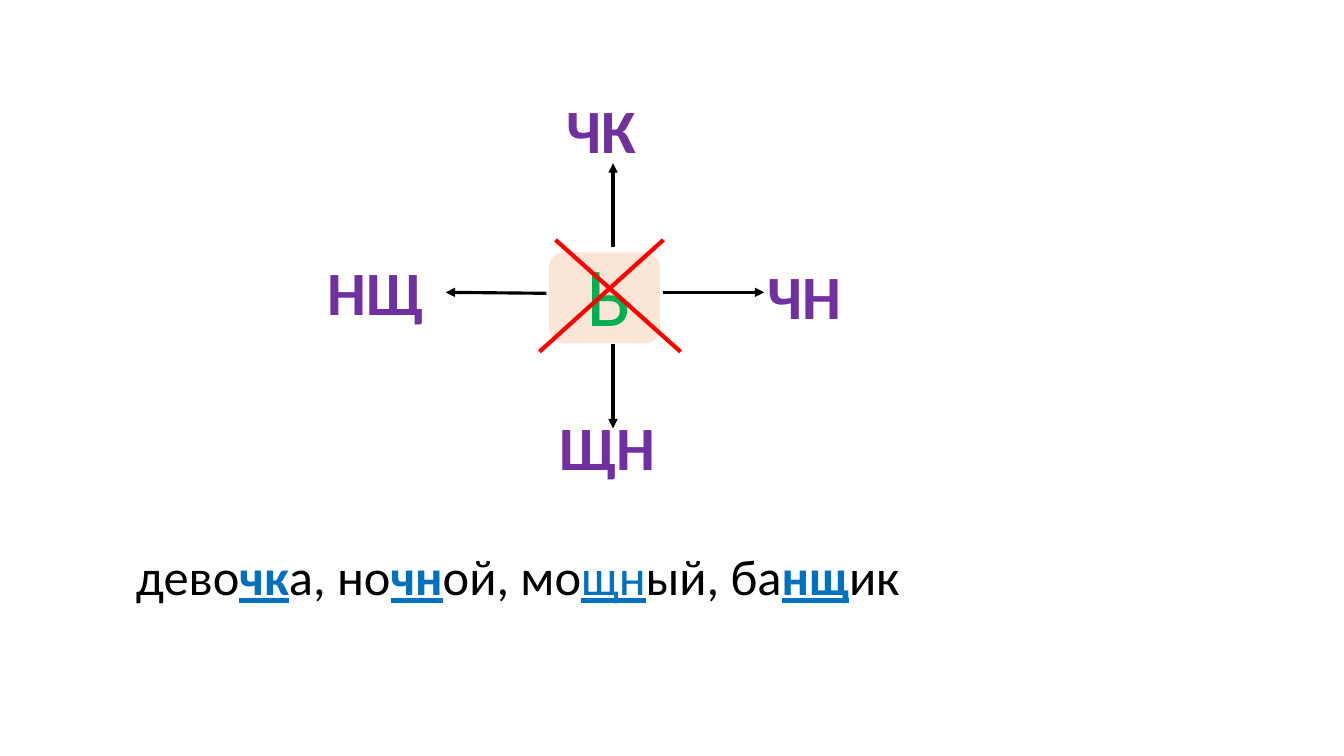
"""Build the slide on spelling letter pairs without a soft sign."""
from lxml.etree import SubElement
from pptx import Presentation
from pptx.dml.color import RGBColor
from pptx.enum.shapes import MSO_CONNECTOR, MSO_SHAPE
from pptx.oxml.ns import qn
from pptx.util import Inches, Pt

COLORS = {
    "card": "FBE5D6", "sign": "00B050", "cross": "FF0000", "arrow": "000000",
    "pair": "7030A0", "text": "000000", "accent": "0070C0",
}
CARD = (5.45, 2.51, 1.09, 0.89)
SIGN = ("Ь", (5.72, 2.36, 0.72, 1.11))
CROSS = [((6.58, 2.38), (5.35, 3.49)), ((5.51, 2.38), (6.75, 3.49))]
ARROWS = [
    ((6.08, 2.45), (6.08, 1.62)),
    ((6.08, 3.41), (6.08, 4.25)),
    ((5.42, 2.91), (4.42, 2.9)),
    ((6.58, 2.9), (7.58, 2.9)),
]
PAIRS = [
    ("ЧК", (5.52, 0.86, 1.11, 0.84)),
    ("ЧН", (7.51, 2.51, 1.11, 0.84)),
    ("ЩН", (5.45, 4.01, 1.42, 0.84)),
    ("НЩ", (3.15, 2.47, 1.42, 0.84)),
]
PLAIN = {}
MARKED = {"color": "accent", "underline": True}
STRONG = {**MARKED, "bold": True}
EXAMPLES = [
    ("дево", PLAIN), ("чк", STRONG), ("а, но", PLAIN), ("чн", STRONG),
    ("ой, мо", PLAIN), ("щн", MARKED), ("ый, ба", PLAIN), ("нщ", STRONG),
    ("ик", PLAIN),
]
EXAMPLES_BOX = (1.25, 5.36, 9.26, 0.71)


def rgb(name):
    """Return the named colour."""
    return RGBColor.from_string(COLORS[name])


def add_run(paragraph, text, size=36, color="text", bold=False, underline=False):
    """Append one formatted run."""
    run = paragraph.add_run()
    run.text = text
    font = run.font
    font.name, font.size = "Calibri", Pt(size)
    font.bold, font.underline = bold, underline
    font.color.rgb = rgb(color)


def add_text(slide, box, runs, **style):
    """Add a text box holding one line of runs."""
    frame = slide.shapes.add_textbox(*map(Inches, box)).text_frame
    frame.word_wrap = True
    for text, own_style in runs:
        add_run(frame.paragraphs[0], text, **{**style, **own_style})


def add_line(slide, start, end, color, width, arrow=False):
    """Add a straight line, with an arrowhead at its end if asked."""
    connector = slide.shapes.add_connector(
        MSO_CONNECTOR.STRAIGHT, *map(Inches, start + end))
    connector.line.color.rgb = rgb(color)
    connector.line.width = Pt(width)
    if arrow:
        SubElement(connector.line._get_or_add_ln(), qn("a:tailEnd"), type="triangle")
    SubElement(connector._element.spPr, qn("a:effectLst"))


def add_card(slide):
    """Add the rounded card behind the soft sign."""
    card = slide.shapes.add_shape(MSO_SHAPE.ROUNDED_RECTANGLE, *map(Inches, CARD))
    card.shadow.inherit = False
    card.fill.solid()
    card.fill.fore_color.rgb = rgb("card")
    card.line.color.rgb = rgb("card")
    card.line.width = Pt(1)


def main():
    """Build and save the presentation."""
    presentation = Presentation()
    presentation.slide_width, presentation.slide_height = Inches(13.33), Inches(7.5)
    slide = presentation.slides.add_slide(presentation.slide_layouts[6])
    add_card(slide)
    sign, sign_box = SIGN
    add_text(slide, sign_box, [(sign, PLAIN)], size=60, color="sign")
    for start, end in CROSS:
        add_line(slide, start, end, "cross", 3)
    for start, end in ARROWS:
        add_line(slide, start, end, "arrow", 2.25, arrow=True)
    for pair, box in PAIRS:
        add_text(slide, box, [(pair, PLAIN)], size=44, color="pair", bold=True)
    add_text(slide, EXAMPLES_BOX, EXAMPLES)
    presentation.save("out.pptx")


if __name__ == "__main__":
    main()
